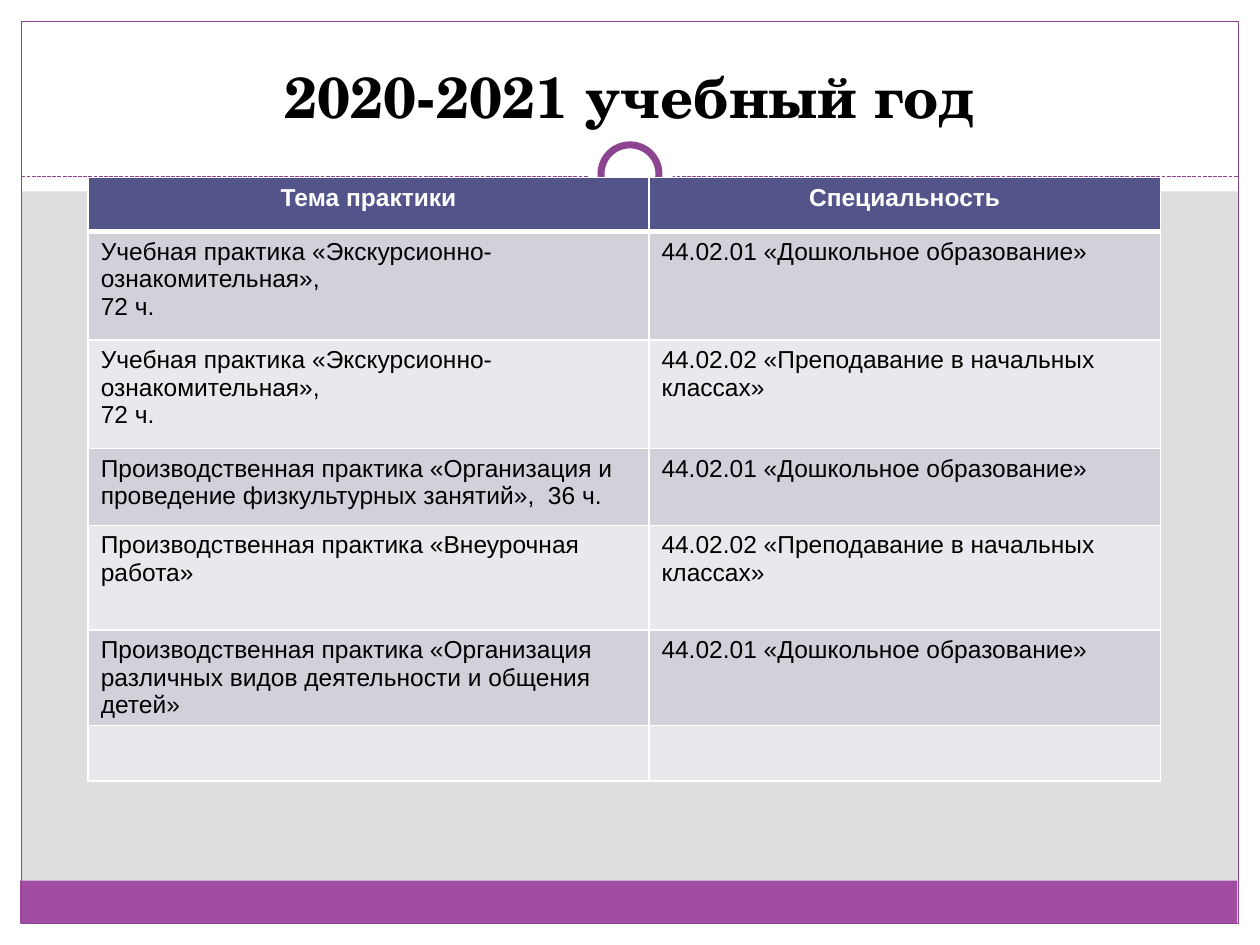
from lxml import etree
from pptx import Presentation
from pptx.dml.color import RGBColor
from pptx.enum.dml import MSO_LINE
from pptx.enum.shapes import MSO_CONNECTOR, MSO_SHAPE
from pptx.enum.text import MSO_ANCHOR, PP_ALIGN
from pptx.oxml.ns import qn
from pptx.util import Inches, Pt

COLORS = {
    "background": "DEDEDE",
    "white": "FFFFFF",
    "black": "000000",
    "purple": "A04DA3",
    "outline": "8D4490",
    "header": "53548A",
    "odd_row": "D1D1DA",
    "even_row": "E9E9ED",
}


def color(name):
    return RGBColor.from_string(COLORS[name])


def write_text(text_frame, text, *, font, size, color_name="black", bold=False,
               align=PP_ALIGN.LEFT):
    """Write one paragraph per line of text, all in the same format."""
    text_frame.word_wrap = True
    text_frame.text = text
    for paragraph in text_frame.paragraphs:
        paragraph.alignment = align
        for run in paragraph.runs:
            run.font.name = font
            run.font.size = Pt(size)
            run.font.bold = bold
            run.font.color.rgb = color(color_name)


presentation = Presentation()
presentation.slide_width = Inches(10)
presentation.slide_height = Inches(7.5)
slide = presentation.slides.add_slide(presentation.slide_layouts[5])
slide.background.fill.solid()
slide.background.fill.fore_color.rgb = color("background")

# White margins, purple footer band and outer frame
RECTANGLE, OVAL = MSO_SHAPE.RECTANGLE, MSO_SHAPE.OVAL
backdrop = [
    (RECTANGLE, 0, 7.33, 10, 0.17, "white", None),
    (RECTANGLE, 0, 0, 10, 1.52, "white", None),
    (RECTANGLE, 0, 0, 0.17, 7.5, "white", None),
    (RECTANGLE, 9.83, 0, 0.17, 7.5, "white", None),
    (RECTANGLE, 0.16, 6.99, 9.66, 0.34, "purple", None),
    (RECTANGLE, 0.17, 0.17, 9.66, 7.16, None, 0.75),
]
ring = [
    (OVAL, 4.67, 1.05, 0.67, 0.67, "white", None),
    (OVAL, 4.77, 1.15, 0.46, 0.46, "white", 4),
]
for kind, left, top, width, height, fill, line_width in backdrop + ring:
    if (kind, left) == (OVAL, ring[0][1]):
        # The dashed divider lies between the frame and the ring
        divider = slide.shapes.add_connector(
            MSO_CONNECTOR.STRAIGHT, Inches(0.17), Inches(1.4), Inches(9.83), Inches(1.4))
        divider.line.color.rgb = color("outline")
        divider.line.width = Pt(0.75)
        divider.line.dash_style = MSO_LINE.SQUARE_DOT
        etree.SubElement(divider._element.spPr, qn("a:effectLst"))
    shape = slide.shapes.add_shape(
        kind, Inches(left), Inches(top), Inches(width), Inches(height))
    shape.shadow.inherit = False
    if fill:
        shape.fill.solid()
        shape.fill.fore_color.rgb = color(fill)
    else:
        shape.fill.background()
    if line_width:
        shape.line.color.rgb = color("outline")
        shape.line.width = Pt(line_width)
    else:
        shape.line.fill.background()

# Title, brought in front of the backdrop
title = slide.shapes.title
title.left, title.top = Inches(0.33), Inches(0.25)
title.width, title.height = Inches(9.33), Inches(0.83)
title.text_frame.vertical_anchor = MSO_ANCHOR.BOTTOM
write_text(title.text_frame, "2020-2021 учебный год", font="TeX Gyre Schola", size=33,
           bold=True, align=PP_ALIGN.CENTER)
slide.shapes._spTree.append(title._element)

# Table of practices
PRESCHOOL = "44.02.01 «Дошкольное образование»"
PRIMARY = "44.02.02 «Преподавание в начальных классах»"
EXCURSION = "Учебная практика «Экскурсионно-ознакомительная»,\n72 ч."
practices = [
    (0.43, "Тема практики", "Специальность"),
    (0.86, EXCURSION, PRESCHOOL),
    (0.86, EXCURSION, PRIMARY),
    (0.61, "Производственная практика «Организация и проведение физкультурных занятий»,  36 ч.",
     PRESCHOOL),
    (0.83, "Производственная практика «Внеурочная работа»", PRIMARY),
    (0.76, "Производственная практика «Организация различных видов деятельности "
           "и общения детей»", PRESCHOOL),
    (0.44, "", ""),
]
column_widths = [4.45, 4.06]
table = slide.shapes.add_table(
    len(practices), len(column_widths), Inches(0.7), Inches(1.41),
    Inches(sum(column_widths)), Inches(sum(row[0] for row in practices))).table
for column, width in zip(table.columns, column_widths):
    column.width = Inches(width)

for row_index, (height, *texts) in enumerate(practices):
    table.rows[row_index].height = Inches(height)
    is_header = row_index == 0
    fill = "header" if is_header else "odd_row" if row_index % 2 else "even_row"
    for column_index, text in enumerate(texts):
        cell = table.cell(row_index, column_index)
        write_text(cell.text_frame, text, font="Arial", size=14, bold=is_header,
                   color_name="white" if is_header else "black",
                   align=PP_ALIGN.CENTER if is_header else PP_ALIGN.LEFT)
        properties = cell._tc.get_or_add_tcPr()
        for side in ("lnL", "lnR", "lnT", "lnB"):
            thick = (side == "lnB" and is_header) or (side == "lnT" and row_index == 1)
            border = etree.SubElement(properties, qn(f"a:{side}"), w=str(Pt(3 if thick else 1)))
            border_fill = etree.SubElement(border, qn("a:solidFill"))
            etree.SubElement(border_fill, qn("a:srgbClr"), val=COLORS["white"])
        cell.fill.solid()
        cell.fill.fore_color.rgb = color(fill)

presentation.save("out.pptx")
